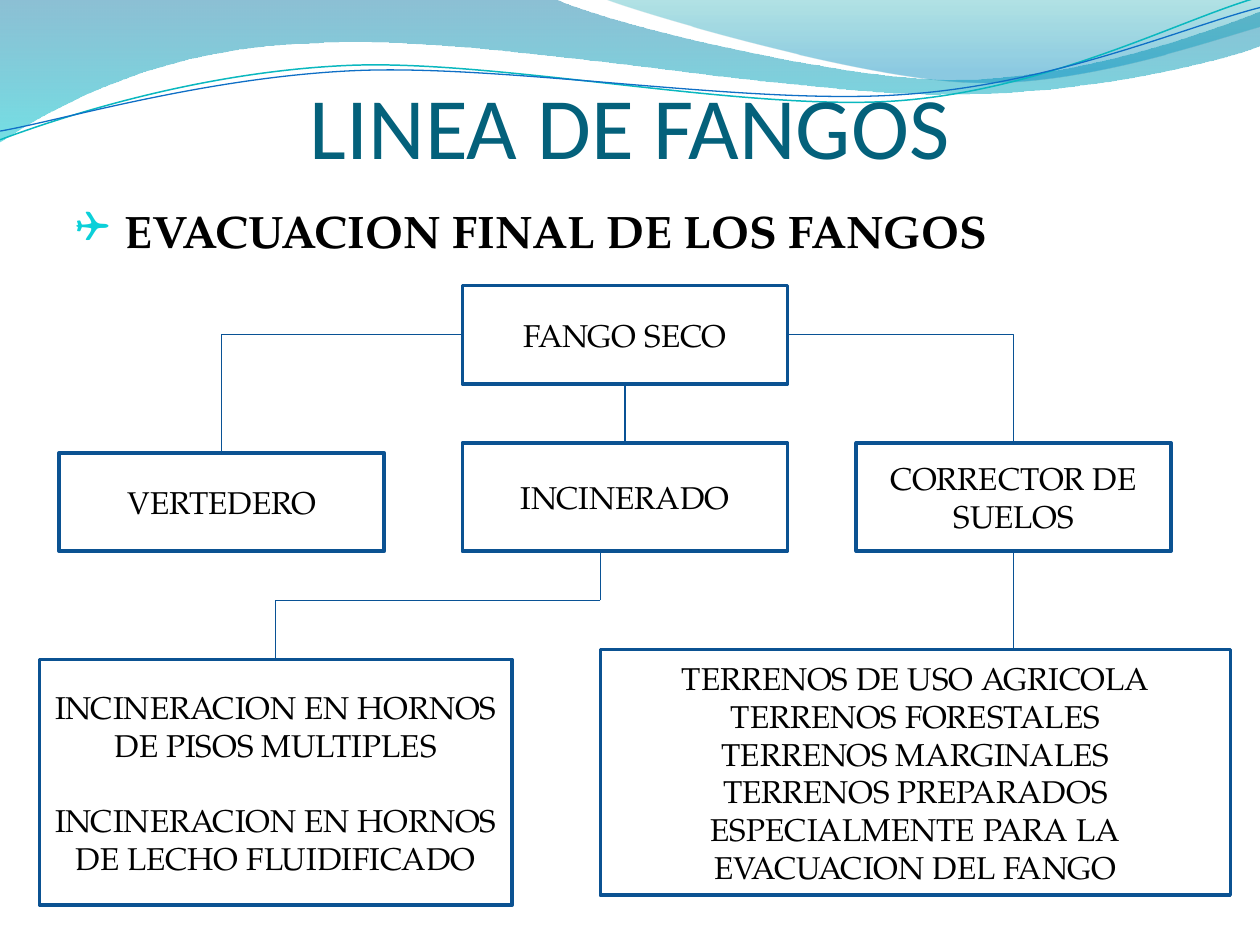
from lxml import etree
from pptx import Presentation
from pptx.dml.color import RGBColor
from pptx.enum import shapes, text
from pptx.oxml import ns
from pptx.util import Pt

COLORS = {
    "title": "04617B", "text": "000000", "bullet": "0BD0D9", "box": "FFFFFF",
    "border": "0B5292", "link": "095295",
    "blue": "0074A1", "cyan": "00C6CF", "teal": "00A1A9", "sky": "008BBF",
    "aqua line": "0AB8BF", "blue line": "0F6FC6",
}
BODY_FONT = "TeX Gyre Pagella"
TITLE = "LINEA DE FANGOS"
HEADING = " EVACUACION FINAL DE LOS FANGOS"

BOXES = {
    "sludge": ((264.2, 163.2, 185.8, 56.2), ["FANGO SECO"], 0),
    "landfill": ((33.8, 258.8, 185.8, 56.2), ["VERTEDERO"], 0),
    "incineration": ((264.2, 253.1, 185.8, 61.9), ["INCINERADO"], 0),
    "soil": ((489.3, 253.1, 180, 61.9), ["CORRECTOR DE SUELOS"], 0),
    "furnaces": ((22.6, 376.9, 270, 140.4), [
        "INCINERACION EN HORNOS DE PISOS MULTIPLES",
        "INCINERACION EN HORNOS DE LECHO FLUIDIFICADO"], 21.6),
    "land": ((343.1, 371.2, 360, 140.4), [
        "TERRENOS DE USO AGRICOLA", "TERRENOS FORESTALES", "TERRENOS MARGINALES",
        "TERRENOS PREPARADOS ESPECIALMENTE PARA LA EVACUACION DEL FANGO"], 0),
}
TOP, LEFT, BOTTOM, RIGHT = range(4)
BRANCH_Y, BRANCH_X, BRANCH_MIDDLE = 343.1, 343.1, 258.5

# Two numbers are a straight step, six are a cubic curve.
WAVES = [
    ([(0, 0), (316.8, -0.7),
      (342.7, 12.2, 478.1, 45.4, 545.8, 45.4), (614.2, 45.4, 689.8, 18.7, 720, 6.5),
      (720.7, 25.9),
      (707.8, 31.7, 626.4, 54.7, 537.1, 54), (447.8, 54, 275, 20.2, 185, 24.5),
      (92.9, 25.9, 33.1, 59.8, -0.7, 81.4), (0, 0)],
     [(0, "blue", 45), (1, "cyan", 55)]),
    ([(344.9, -0.7),
      (366.5, 7.9, 491, 44.6, 553.7, 46.8), (616.3, 49.7, 691.9, 23, 720, 15.1),
      (720, 0), (344.9, -0.7)],
     [(0, "teal", 30), (0.8, "sky", 45)]),
]
STRANDS = [
    ([(0, 79.9), (34.6, 67, 113.8, 41, 199.4, 37.4),
      (284.4, 33.8, 427, 64.1, 513.4, 57.6), (599.8, 51.1, 675.4, 10.8, 718.6, -1.4)],
     "aqua line", 0.85),
    ([(0, 74.9), (33.8, 69.1, 118.1, 43.9, 203.8, 40.3),
      (290.2, 36.7, 429.8, 60.5, 516.2, 54), (602.6, 48.2, 677.5, 15.1, 720, 4.3)],
     "blue line", 0.75),
]


def color(name):
    return RGBColor.from_string(COLORS[name])


def add_outline(page, outline, close):
    first, *rest = [(Pt(step[i]), Pt(step[i + 1]))
                    for step in outline for i in range(0, len(step), 2)]
    builder = page.shapes.build_freeform(*first)
    builder.add_line_segments(rest, close=close)
    shape = builder.convert_to_shape()
    shape.shadow.inherit = False
    segments = iter(list(shape.element.iter(ns.qn("a:lnTo"))))
    for step in outline[1:]:
        segment = next(segments)
        if len(step) == 6:
            segment.addprevious(curve := etree.Element(ns.qn("a:cubicBezTo")))
            for part in (segment, next(segments), next(segments)):
                curve.append(part[0])
                part.getparent().remove(part)
    return shape


def add_wave(page, outline, stops):
    wave = add_outline(page, outline, True)
    wave.line.fill.background()
    wave.fill.gradient()
    wave.fill.gradient_angle = 270
    for stop, (position, name, opacity) in zip(wave.fill.gradient_stops, stops):
        stop.position = position
        stop.color.rgb = color(name)
    tints = wave.element.spPr.iter(ns.qn("a:srgbClr"))
    for tint, (position, name, opacity) in zip(tints, stops):
        etree.SubElement(tint, ns.qn("a:alpha"), val=str(opacity * 1000))


def add_strand(page, outline, name, width):
    strand = add_outline(page, outline, False)
    strand.fill.background()
    strand.line.color.rgb = color(name)
    strand.line.width = Pt(width)


def add_span(para, words, size, font, name="text", bold=False):
    span = para.add_run()
    span.text = words
    span.font.size, span.font.name, span.font.bold = Pt(size), font, bold
    span.font.color.rgb = color(name)


def add_title(page):
    frame = page.shapes.add_textbox(Pt(36), Pt(33.4), Pt(648), Pt(67.7)).text_frame
    frame.word_wrap = True
    frame.vertical_anchor = text.MSO_ANCHOR.BOTTOM
    frame.margin_left = frame.margin_right = frame.margin_bottom = 0
    para = frame.paragraphs[0]
    para.alignment = text.PP_ALIGN.CENTER
    add_span(para, TITLE, 50, "Calibri", "title")


def add_heading(page):
    frame = page.shapes.add_textbox(Pt(36), Pt(112.3), Pt(648), Pt(385.2)).text_frame
    frame.word_wrap = True
    para = frame.paragraphs[0]
    para.space_before = Pt(5.2)
    add_span(para, HEADING, 26, BODY_FONT, bold=True)
    properties = para._p.get_or_add_pPr()
    properties.set("marL", str(Pt(21.6)))
    properties.set("indent", str(Pt(-21.6)))
    tint = etree.SubElement(properties, ns.qn("a:buClr"))
    etree.SubElement(tint, ns.qn("a:srgbClr"), val=COLORS["bullet"])
    etree.SubElement(properties, ns.qn("a:buSzPct"), val="95000")
    etree.SubElement(properties, ns.qn("a:buFont"), typeface="Wingdings", charset="2")
    etree.SubElement(properties, ns.qn("a:buChar"), char="❑")


def add_box(page, place, lines, gap):
    box = page.shapes.add_shape(shapes.MSO_SHAPE.RECTANGLE, *map(Pt, place))
    box.shadow.inherit = False
    box.fill.solid()
    box.fill.fore_color.rgb = color("box")
    box.line.color.rgb = color("border")
    box.line.width = Pt(2)
    frame = box.text_frame
    frame.word_wrap = True
    frame.vertical_anchor = text.MSO_ANCHOR.MIDDLE
    for number, line in enumerate(lines):
        para = frame.add_paragraph() if number else frame.paragraphs[0]
        para.alignment = text.PP_ALIGN.CENTER
        para.space_before = Pt(gap if number else 0)
        add_span(para, line, 18, BODY_FONT)
    return box


def add_link(page, start, end, begin=None, finish=None, bent=False):
    kind = shapes.MSO_CONNECTOR.ELBOW if bent else shapes.MSO_CONNECTOR.STRAIGHT
    link = page.shapes.add_connector(kind, *map(Pt, (*start, *end)))
    if begin:
        link.begin_connect(*begin)
    if finish:
        link.end_connect(*finish)
    link.line.color.rgb = color("link")
    link.line.width = Pt(0.75)
    properties = link._element.spPr
    if bent:
        properties.find(ns.qn("a:prstGeom")).set("prst", "bentConnector2")
    etree.SubElement(properties, ns.qn("a:effectLst"))


def side(name, site):
    left, top, width, height = BOXES[name][0]
    return {TOP: (left + width / 2, top), LEFT: (left, top + height / 2),
            BOTTOM: (left + width / 2, top + height),
            RIGHT: (left + width, top + height / 2)}[site]


def main():
    deck = Presentation()
    deck.slide_width, deck.slide_height = Pt(720), Pt(540)
    page = deck.slides.add_slide(deck.slide_layouts[6])
    for wave in WAVES:
        add_wave(page, *wave)
    for strand in STRANDS:
        add_strand(page, *strand)
    add_title(page)
    add_heading(page)
    boxes = {name: add_box(page, *box) for name, box in BOXES.items()}

    furnace_top, soil_bottom = side("furnaces", TOP), side("soil", BOTTOM)
    middle = (BRANCH_MIDDLE, BRANCH_Y)
    corner, turn = (furnace_top[0], BRANCH_Y), (BRANCH_X, BRANCH_Y)
    add_link(page, middle, corner)
    add_link(page, corner, furnace_top, finish=(boxes["furnaces"], TOP))
    add_link(page, middle, turn)
    add_link(page, turn, (BRANCH_X, side("incineration", BOTTOM)[1]))
    add_link(page, soil_bottom, (soil_bottom[0], BOXES["land"][0][1]),
             begin=(boxes["soil"], BOTTOM))
    for source, out, target, bent in [("sludge", BOTTOM, "incineration", False),
                                      ("sludge", RIGHT, "soil", True),
                                      ("sludge", LEFT, "landfill", True)]:
        add_link(page, side(source, out), side(target, TOP),
                 (boxes[source], out), (boxes[target], TOP), bent)
    deck.save("out.pptx")


if __name__ == "__main__":
    main()
